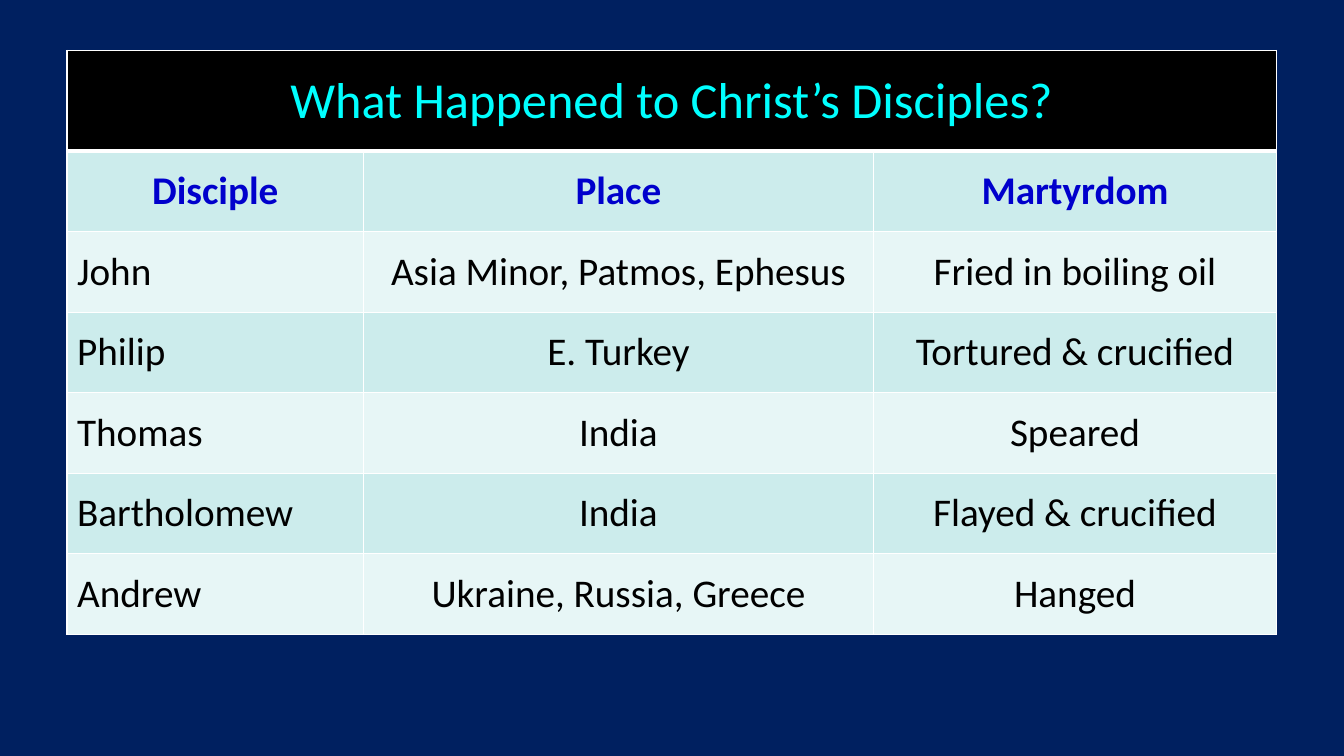
from dataclasses import dataclass

from lxml.etree import SubElement
from pptx import Presentation
from pptx.dml.color import RGBColor
from pptx.enum.text import MSO_ANCHOR, PP_ALIGN
from pptx.oxml.ns import qn
from pptx.util import Cm, Pt

TITLE = "What Happened to Christ’s Disciples?"
HEADINGS = ("Disciple", "Place", "Martyrdom")
DISCIPLES = [
    ("John", "Asia Minor, Patmos, Ephesus", "Fried in boiling oil"),
    ("Philip", "E. Turkey", "Tortured & crucified"),
    ("Thomas", "India", "Speared"),
    ("Bartholomew", "India", "Flayed & crucified"),
    ("Andrew", "Ukraine, Russia, Greece", "Hanged"),
]
LEFT, TOP = Cm(1.69), Cm(1.27)
COLUMN_WIDTHS = [Cm(7.47), Cm(12.85), Cm(10.16)]
TITLE_HEIGHT, ROW_HEIGHT = Cm(2.54), Cm(2.03)


@dataclass(frozen=True)
class Theme:
    font: str = "Calibri"
    background: str = "002060"
    title_fill: str = "000000"
    title: str = "00FFFF"
    heading: str = "0000CC"
    body: str = "000000"
    bands: tuple = ("CCECEC", "E7F6F6")
    border: str = "FFFFFF"
    title_size: int = 36
    body_size: int = 28
    thin: int = 1
    thick: int = 3


THEME = Theme()


def paint(fill, color):
    fill.solid()
    fill.fore_color.rgb = RGBColor.from_string(color)


def write(cell, text, size=THEME.body_size, color=THEME.body, bold=False,
          align=PP_ALIGN.CENTER):
    cell.vertical_anchor = MSO_ANCHOR.MIDDLE
    p = cell.text_frame.paragraphs[0]
    p.alignment = align
    r = p.add_run()
    r.text = text
    r.font.name, r.font.size, r.font.bold = THEME.font, Pt(size), bold
    r.font.color.rgb = RGBColor.from_string(color)


def set_borders(cell, top=THEME.thin, bottom=THEME.thin):
    """Draw all four borders; call before filling, as lines come first in tcPr."""
    tcPr = cell._tc.get_or_add_tcPr()
    widths = {"L": THEME.thin, "R": THEME.thin, "T": top, "B": bottom}
    for side, width in widths.items():
        ln = SubElement(tcPr, qn(f"a:ln{side}"), w=str(Pt(width)))
        solid = SubElement(ln, qn("a:solidFill"))
        SubElement(solid, qn("a:srgbClr"), val=THEME.border)


def add_disciples_table(s):
    rows = [HEADINGS, *DISCIPLES]
    heights = [TITLE_HEIGHT] + [ROW_HEIGHT] * len(rows)
    table = s.shapes.add_table(len(heights), len(COLUMN_WIDTHS), LEFT, TOP,
                               sum(COLUMN_WIDTHS), sum(heights)).table
    for column, width in zip(table.columns, COLUMN_WIDTHS):
        column.width = width
    for row, height in zip(table.rows, heights):
        row.height = height

    for cell in table.rows[0].cells:
        set_borders(cell, bottom=THEME.thick)
        paint(cell.fill, THEME.title_fill)
    title = table.cell(0, 0)
    title.merge(table.cell(0, len(COLUMN_WIDTHS) - 1))
    write(title, TITLE, size=THEME.title_size, color=THEME.title)

    for i, texts in enumerate(rows):
        is_heading = i == 0
        for j, text in enumerate(texts):
            cell = table.cell(i + 1, j)
            set_borders(cell, top=THEME.thick if is_heading else THEME.thin)
            paint(cell.fill, THEME.bands[i % 2])
            is_name = j == 0 and not is_heading
            write(cell, text, bold=is_heading,
                  color=THEME.heading if is_heading else THEME.body,
                  align=PP_ALIGN.LEFT if is_name else PP_ALIGN.CENTER)


def main():
    prs = Presentation()
    prs.slide_width, prs.slide_height = Cm(33.87), Cm(19.05)
    s = prs.slides.add_slide(prs.slide_layouts.get_by_name("Blank"))
    paint(s.background.fill, THEME.background)
    add_disciples_table(s)
    prs.save("out.pptx")


if __name__ == "__main__":
    main()
